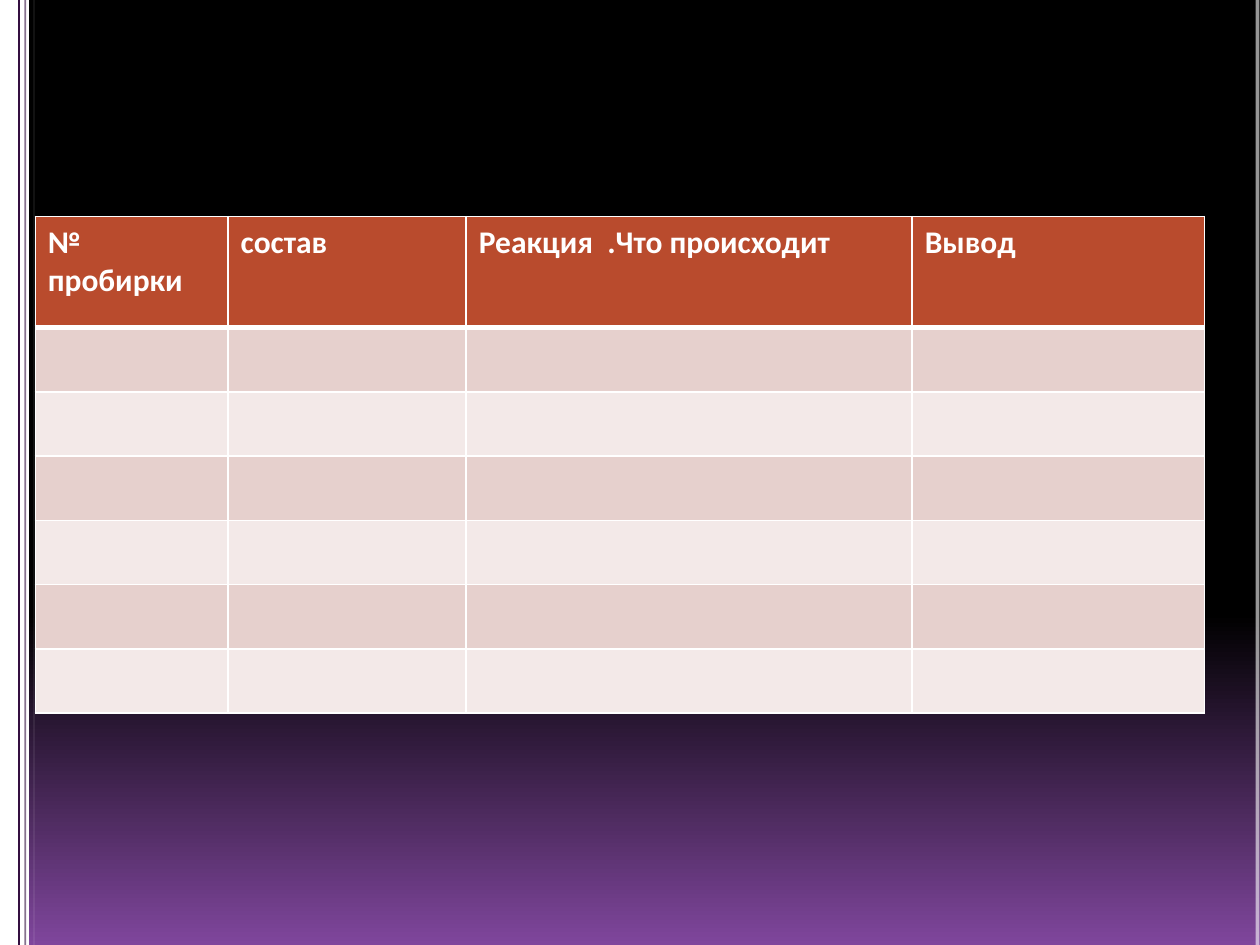
from dataclasses import dataclass

from lxml.etree import SubElement
from pptx import Presentation
from pptx.dml.color import RGBColor
from pptx.enum.shapes import MSO_CONNECTOR, MSO_SHAPE
from pptx.oxml.ns import qn
from pptx.util import Inches, Pt


@dataclass(frozen=True)
class Theme:
    """Colours, font and sizes of the slide."""
    white: str = "FFFFFF"
    black: str = "000000"
    purple: str = "7F469C"
    plum: str = "340F40"
    rust: str = "B94B2D"
    bands: tuple = ("E6D0CD", "F3E9E8")
    font: str = "Calibri"
    body: int = 18
    thin: int = 1
    thick: int = 3


THEME = Theme()
HEADS = ("№ пробирки", "состав", "Реакция  .Что происходит", "Вывод")
WIDTHS = (1.53, 1.89, 3.54, 2.32)
HEIGHTS = (0.88,) + (0.51,) * 6
RULES = (
    (0.15, THEME.plum, 1, 100),
    (0.2, THEME.plum, 1, 59),
    (0.27, THEME.white, 0.25, 59),
    (9.98, THEME.white, 2.25, 59),
)


def paint(slide):
    """Fill the background with a downward fade from black to purple."""
    fill = slide.background.fill
    fill.gradient()
    fill.gradient_angle = 270
    fades = ((0.65, THEME.black), (1, THEME.purple))
    for stop, (place, color) in zip(fill.gradient_stops, fades):
        stop.position = place
        stop.color.rgb = RGBColor.from_string(color)


def add_strip(slide):
    """Add the white strip along the left edge."""
    strip = slide.shapes.add_shape(
        MSO_SHAPE.RECTANGLE, 0, 0, Inches(0.23), Inches(7.5))
    strip.shadow.inherit = False
    strip.fill.solid()
    strip.fill.fore_color.rgb = RGBColor.from_string(THEME.white)
    strip.line.fill.background()


def add_rule(slide, left, color, width, alpha):
    """Add a full-height line with the given opacity in percent."""
    rule = slide.shapes.add_connector(
        MSO_CONNECTOR.STRAIGHT, Inches(left), 0, Inches(left), Inches(7.5))
    rule.line.width = Pt(width)
    rule.line.color.rgb = RGBColor.from_string(color)
    props = rule._element.spPr
    if alpha < 100:
        tint = props.find(".//" + qn("a:srgbClr"))
        SubElement(tint, qn("a:alpha"), val=str(alpha * 1000))
    SubElement(props, qn("a:effectLst"))


def put_text(frame, text, size=THEME.body, color=THEME.white, bold=False):
    """Write formatted text into a text frame."""
    run = frame.paragraphs[0].add_run()
    run.text = text
    run.font.name = THEME.font
    run.font.size = Pt(size)
    run.font.bold = bold
    run.font.color.rgb = RGBColor.from_string(color)


def style_cell(cell, color, top, base):
    """Set the borders and fill of a cell."""
    props = cell._tc.get_or_add_tcPr()
    edges = {"L": THEME.thin, "R": THEME.thin, "T": top, "B": base}
    for side, width in edges.items():
        edge = SubElement(props, qn("a:ln" + side), w=str(Pt(width)))
        solid = SubElement(edge, qn("a:solidFill"))
        SubElement(solid, qn("a:srgbClr"), val=THEME.white)
    cell.fill.solid()
    cell.fill.fore_color.rgb = RGBColor.from_string(color)


def add_grid(slide):
    """Add the table with its header and banded empty rows."""
    table = slide.shapes.add_table(
        len(HEIGHTS), len(WIDTHS), Inches(0.28), Inches(1.72),
        Inches(sum(WIDTHS)), Inches(sum(HEIGHTS))).table
    for col, width in zip(table.columns, WIDTHS):
        col.width = Inches(width)
    for index, (row, height) in enumerate(zip(table.rows, HEIGHTS)):
        row.height = Inches(height)
        color = THEME.bands[(index - 1) % 2] if index else THEME.rust
        top = THEME.thick if index == 1 else THEME.thin
        base = THEME.thin if index else THEME.thick
        for cell in row.cells:
            style_cell(cell, color, top, base)
    for cell, head in zip(table.rows[0].cells, HEADS):
        put_text(cell.text_frame, head, bold=True)


def main():
    """Build and save the slide."""
    deck = Presentation()
    deck.slide_width, deck.slide_height = Inches(10), Inches(7.5)
    slide = deck.slides.add_slide(deck.slide_layouts[6])
    paint(slide)
    add_strip(slide)
    for rule in RULES:
        add_rule(slide, *rule)
    add_grid(slide)
    deck.save("out.pptx")


if __name__ == "__main__":
    main()
